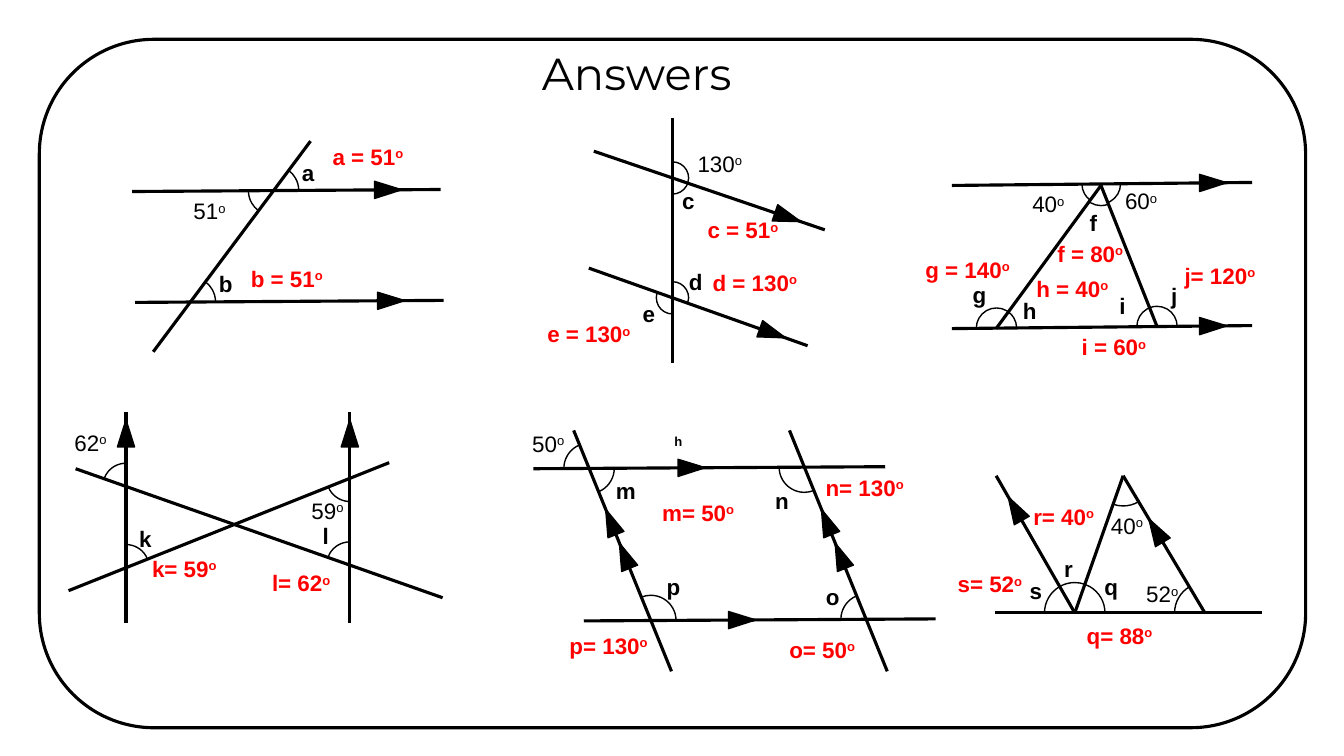
import math
from collections import namedtuple

from lxml import etree
from pptx import Presentation
from pptx.dml.color import RGBColor
from pptx.enum.shapes import MSO_CONNECTOR, MSO_SHAPE
from pptx.enum.text import MSO_ANCHOR, MSO_AUTO_SIZE, PP_ALIGN
from pptx.oxml.ns import qn
from pptx.util import Inches, Pt

STRAIGHT = MSO_CONNECTOR.STRAIGHT
ARC = MSO_SHAPE.ARC
TRIANGLE = MSO_SHAPE.ISOSCELES_TRIANGLE
ROUNDED = MSO_SHAPE.ROUNDED_RECTANGLE
TOP = MSO_ANCHOR.TOP
CENTER = PP_ALIGN.CENTER
NO_AUTOFIT = MSO_AUTO_SIZE.NONE

COLORS = {"ink": "000000", "answer": "FF0000", "paper": "FFFFFF"}
LABEL_FONT, TITLE_FONT = "Arial", "Montserrat"
HEAD_WIDTH, HEAD_LENGTH = 0.17, 0.27
LETTER_WIDTH, GIVEN_WIDTH, ANSWER_WIDTH = 0.33, 0.68, 1.07
LABEL_HEIGHT = 0.37

Line = namedtuple("Line", "x1 y1 x2 y2")


# Geometry
def shifted(line, right, down):
    return Line(line.x1 + right, line.y1 + down, line.x2 + right, line.y2 + down)


def direction(line):
    """Clockwise degrees from the horizontal."""
    return math.degrees(math.atan2(line.y2 - line.y1, line.x2 - line.x1))


def point_on(line, share):
    return line.x1 + share * (line.x2 - line.x1), line.y1 + share * (line.y2 - line.y1)


def crossing(first, second):
    dx, dy = first.x2 - first.x1, first.y2 - first.y1
    ex, ey = second.x2 - second.x1, second.y2 - second.y1
    share = ((second.x1 - first.x1) * ey - (second.y1 - first.y1) * ex) / (dx * ey - dy * ex)
    return point_on(first, share)


# Elements
def color(name):
    return RGBColor.from_string(COLORS[name])


def add_outlined(slide, kind, box, weight, fill=None):
    shape = slide.shapes.add_shape(kind, *map(Inches, box))
    shape.shadow.inherit = False
    if fill:
        shape.fill.solid()
        shape.fill.fore_color.rgb = color(fill)
    else:
        shape.fill.background()
    shape.line.color.rgb = color("ink")
    shape.line.width = Pt(weight)
    return shape


def add_line(slide, line):
    connector = slide.shapes.add_connector(STRAIGHT, *map(Inches, line))
    connector.line.color.rgb = color("ink")
    connector.line.width = Pt(2.25)
    etree.SubElement(connector._element.spPr, qn("a:effectLst"))


def add_head(slide, line, share):
    x, y = point_on(line, share)
    box = (x - HEAD_WIDTH / 2, y - HEAD_LENGTH / 2, HEAD_WIDTH, HEAD_LENGTH)
    add_outlined(slide, TRIANGLE, box, 1, "ink").rotation = direction(line) + 90


def add_run(paragraph, text, tint, bold=False, raised=False, size=16, font=LABEL_FONT):
    run = paragraph.add_run()
    run.text = text
    run.font.name = font
    run.font.size = Pt(size)
    run.font.bold = bold
    run.font.color.rgb = color(tint)
    if raised:
        run._r.get_or_add_rPr().set("baseline", "30000")


def add_label(slide, left, top, width):
    box = slide.shapes.add_textbox(*map(Inches, (left, top, width, LABEL_HEIGHT)))
    box.text_frame.word_wrap = True
    return box.text_frame.paragraphs[0]


def add_degrees(slide, text, left, top, width, tint, bold):
    paragraph = add_label(slide, left, top, width)
    add_run(paragraph, text, tint, bold)
    add_run(paragraph, "o", tint, bold, raised=True)


def add_angle(slide, lines, sides, letter, radius, reach):
    """Arc clockwise from one side to the next, with its letter on the bisector."""
    x, y = crossing(*(lines[name] for name, sign in sides))
    start, end = ((direction(lines[name]) + (180 if sign == "-" else 0)) % 360
                  for name, sign in sides)
    arc = add_outlined(slide, ARC, (x - radius, y - radius, 2 * radius, 2 * radius), 1)
    # Arc adjustments count 100000 units of 1/60000 degree
    arc.adjustments[0], arc.adjustments[1] = start * 0.6, end * 0.6
    if letter:
        bisector = math.radians(start + (end - start) % 360 / 2)
        left = x + reach * math.cos(bisector) - LETTER_WIDTH / 2
        top = y + reach * math.sin(bisector) - LABEL_HEIGHT / 2
        add_run(add_label(slide, left, top, LETTER_WIDTH), letter, "ink", bold=True)


def add_figure(slide, lines, arrows, angles, radius, reach, given, answers):
    for line in lines.values():
        add_line(slide, line)
    for names, shares in arrows.items():
        for name in names:
            for share in shares:
                add_head(slide, lines[name], share)
    for angle in angles:
        start, end, *letter = angle.split()
        add_angle(slide, lines, (start, end), "".join(letter), radius, reach)
    for text, left, top in given:
        add_degrees(slide, text, left, top, GIVEN_WIDTH, "ink", False)
    for text, left, top in answers:
        add_degrees(slide, text, left, top, ANSWER_WIDTH, "answer", True)


def format_title(slide, text):
    title = slide.shapes.title
    title.left, title.top, title.width, title.height = map(Inches, (5.05, 0.4, 2.53, 0.64))
    frame = title.text_frame
    frame.word_wrap = True
    frame.auto_size = NO_AUTOFIT
    frame.vertical_anchor = TOP
    frame.paragraphs[0].alignment = CENTER
    add_run(frame.paragraphs[0], text, "ink", size=32, font=TITLE_FONT)
    # Bring the title in front of the filled frame
    title._element.getparent().append(title._element)


def main():
    presentation = Presentation()
    presentation.slide_width = Inches(13.33)
    presentation.slide_height = Inches(7.5)
    slide = presentation.slides.add_slide(presentation.slide_layouts[5])

    # Frame and title
    add_outlined(slide, ROUNDED, (0.39, 0.39, 12.56, 6.83), 2.25, "paper")
    format_title(slide, "Answers")

    # Two parallels and a transversal
    upper = Line(1.31, 1.9, 4.37, 1.88)
    add_figure(
        slide, {"A": upper, "B": shifted(upper, 0.03, 1.1), "T": Line(1.52, 3.49, 3.08, 1.4)},
        {"AB": [0.83]}, ["T- A-", "T+ A+ a", "T+ B+ b"], 0.25, 0.39,
        [("51", 1.82, 1.91)], [("a = 51", 3.2, 1.37), ("b = 51", 2.39, 2.58)])

    # Vertical transversal
    add_figure(
        slide, {"V": Line(6.67, 3.6, 6.67, 1.17), "P": Line(5.89, 1.5, 8.18, 2.28),
                "Q": Line(5.84, 2.66, 8.01, 3.43)},
        {"PQ": [0.84]}, ["V+ P+", "P+ V- c", "V+ Q+ d", "V- Q- e"], 0.16, 0.28,
        [("130", 6.82, 1.44)],
        [("c = 51", 6.92, 2.1), ("d = 130", 6.97, 2.62), ("e = 130", 5.33, 3.13)])

    # Triangle between parallels
    upper = Line(9.44, 1.84, 12.42, 1.81)
    add_figure(
        slide, {"A": upper, "B": shifted(upper, 0, 1.42), "L": Line(10.92, 1.84, 9.88, 3.26),
                "R": Line(10.92, 1.84, 11.48, 3.25)},
        {"AB": [0.87]},
        ["L+ A-", "A+ R+", "R+ L+ f", "B- L- g", "L- B+ h", "B- R- i", "R- B+ j"], 0.2, 0.37,
        [("40", 10.14, 1.84), ("60", 11.06, 1.81)],
        [("f = 80", 10.39, 2.33), ("g = 140", 9.08, 2.49), ("h = 40", 10.18, 2.68),
         ("i = 60", 10.63, 3.26), ("j= 120", 11.65, 2.55)])

    # Crossing lines between vertical parallels
    upright = Line(1.25, 6.18, 1.25, 4.09)
    add_figure(
        slide, {"V": upright, "W": shifted(upright, 2.22, 0), "K": Line(0.68, 5.86, 3.86, 4.59),
                "D": Line(0.75, 4.65, 4.39, 5.93)},
        {"VW": [0.9]}, ["D- V+", "W- K-", "V+ K+ k", "D- W+ l"], 0.23, 0.35,
        [("62", 0.64, 4.21), ("59", 2.99, 4.88)],
        [("k= 59", 1.41, 5.46), ("l= 62", 2.6, 5.6)])

    # Parallelogram, with a small raised letter above it
    upper, side = Line(5.29, 4.65, 8.78, 4.63), Line(6.66, 6.66, 5.69, 4.27)
    add_figure(
        slide, {"A": upper, "B": shifted(upper, 0.5, 1.51), "S": side,
                "T": shifted(side, 2.14, 0)},
        {"AB": [0.45], "ST": [0.48, 0.62]},
        ["A- S+", "A+ S- m", "T- A- n", "B- T+ o", "S+ B+ p"], 0.25, 0.4,
        [("50", 5.18, 4.22)],
        [("m= 50", 6.47, 4.9), ("n= 130", 8.09, 4.65), ("o= 50", 7.73, 6.26),
         ("p= 130", 5.55, 6.22)])
    add_run(add_label(slide, 6.59, 4.23, LETTER_WIDTH), "h", "ink", bold=True, raised=True)

    # Triangle with a parallel side
    add_figure(
        slide, {"S": Line(10.66, 6.08, 9.88, 4.72), "B": Line(9.87, 6.08, 12.52, 6.08),
                "R": Line(11.95, 6.08, 11.14, 4.72), "M": Line(10.66, 6.08, 11.14, 4.72)},
        {"S": [0.76], "R": [0.6]},
        ["B- R+", "R- M-", "M+ B+ q", "S+ M+ r", "B- S+ s"], 0.3, 0.44,
        [("40", 10.92, 5.03), ("52", 11.27, 5.71)],
        [("q= 88", 10.68, 6.12), ("r= 40", 10.15, 4.94), ("s= 52", 9.4, 5.61)])

    presentation.save("out.pptx")


if __name__ == "__main__":
    main()
